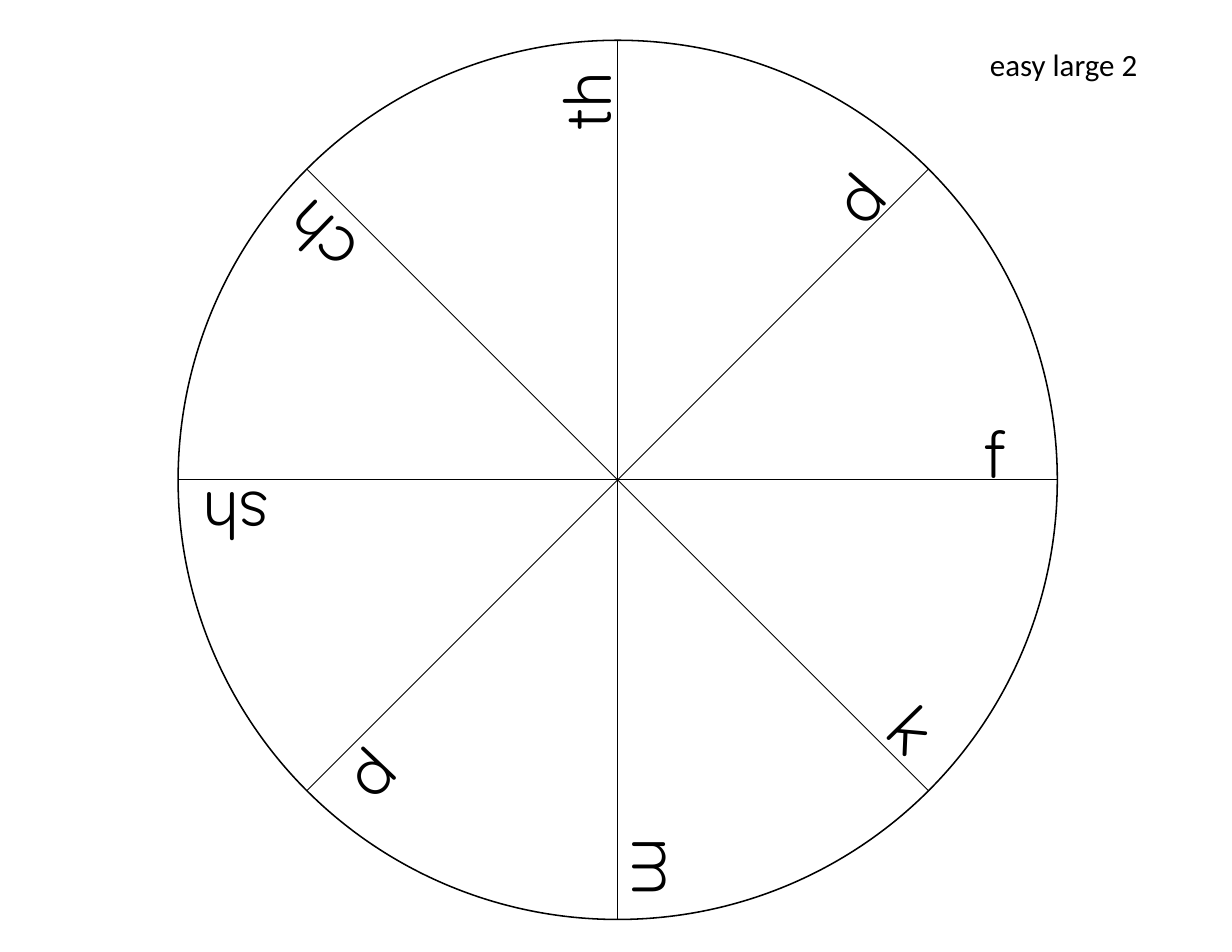
import math

from lxml import etree
from pptx import Presentation
from pptx.dml.color import RGBColor
from pptx.enum import shapes, text
from pptx.oxml import ns
from pptx.util import Inches, Pt

BLACK = RGBColor(0, 0, 0)
LETTER_FORMAT = {"size": Pt(41.9), "name": "Quicksand"}
TITLE_FORMAT = {"size": Pt(19.9), "name": "Calibri"}
LETTER_HEIGHT = 0.81
SPOKES = 8

# Sound, box width, rotation, distance along its spoke, height above the spoke
SOUNDS = [
    ("f", 0.47, 0, 3.4, 0.24),
    ("k", 0.47, 45.7, 3.42, 0.29),
    ("m", 0.47, 90, 3.33, 0.36),
    ("p", 0.47, 133.5, 3.37, 0.42),
    ("sh", 0.88, 180, 3.45, 0.34),
    ("ch", 1.06, 224, 3.52, 0.36),
    ("th", 0.88, 270, 3.46, 0.28),
    ("d", 0.47, 311.3, 3.26, 0.26),
]


def add_label(parent, box, wording, font_format, rotation=0):
    label = parent.add_textbox(*map(Inches, box))
    label.rotation = rotation
    frame = label.text_frame
    frame.word_wrap = True
    frame.auto_size = text.MSO_AUTO_SIZE.SHAPE_TO_FIT_TEXT
    run = frame.paragraphs[0].add_run()
    run.text = wording
    run.font.color.rgb = BLACK
    for attribute, value in font_format.items():
        setattr(run.font, attribute, value)


def add_wheel(slide, left, top, diameter):
    wheel = slide.shapes.add_group_shape().shapes
    rim = wheel.add_shape(shapes.MSO_SHAPE.OVAL,
                          *map(Inches, (left, top, diameter, diameter)))
    rim.shadow.inherit = False
    rim.fill.background()
    rim.line.color.rgb = BLACK
    rim.line.width = Pt(1)

    radius = diameter / 2
    for spoke in range(SPOKES // 2):
        angle = math.tau * spoke / SPOKES
        dx, dy = radius * math.cos(angle), radius * math.sin(angle)
        center_x, center_y = left + radius, top + radius
        ends = (center_x - dx, center_y - dy, center_x + dx, center_y + dy)
        diameter_line = wheel.add_connector(
            shapes.MSO_CONNECTOR.STRAIGHT, *map(Inches, ends))
        diameter_line.line.color.rgb = BLACK
        diameter_line.line.width = Pt(0.5)
        etree.SubElement(diameter_line._element.spPr, ns.qn("a:effectLst"))


def add_sounds(slide, left, top, diameter):
    """Stand each sound on its spoke, near the rim."""
    sounds = slide.shapes.add_group_shape().shapes
    for spoke, (sound, width, rotation, along, above) in enumerate(SOUNDS):
        angle = math.tau * spoke / SPOKES
        cos, sin = math.cos(angle), math.sin(angle)
        x = left + diameter / 2 + along * cos + above * sin
        y = top + diameter / 2 + along * sin - above * cos
        box = (x - width / 2, y - LETTER_HEIGHT / 2, width, LETTER_HEIGHT)
        add_label(sounds, box, sound, LETTER_FORMAT, rotation)


def main():
    deck = Presentation()
    deck.slide_width, deck.slide_height = Inches(11), Inches(8.5)
    slide = deck.slides.add_slide(deck.slide_layouts[6])
    wheel_box = (1.59, 0.36, 7.85)
    add_wheel(slide, *wheel_box)
    add_sounds(slide, *wheel_box)
    add_label(slide.shapes, (8.74, 0.36, 1.83, 0.44), "easy large 2", TITLE_FORMAT)
    deck.save("out.pptx")


if __name__ == "__main__":
    main()
